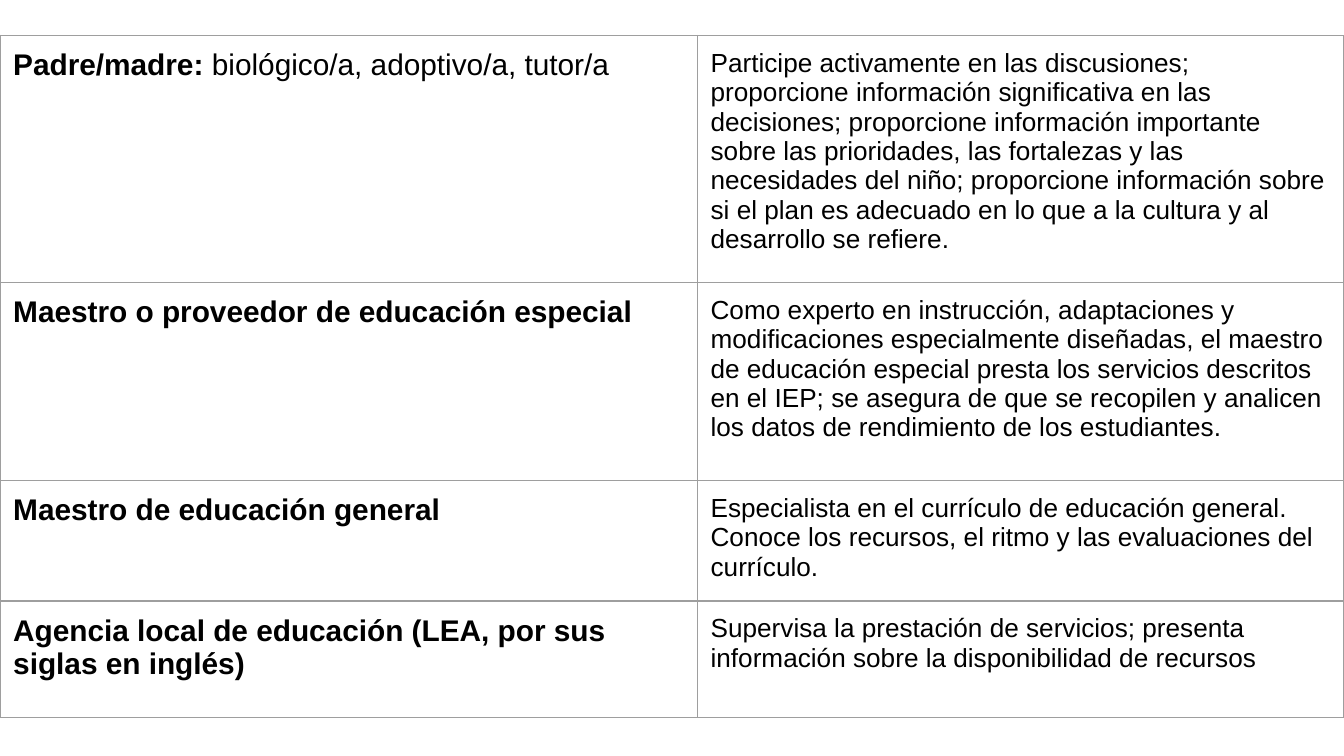
from lxml import etree
from pptx import Presentation
from pptx import util as u
from pptx.dml.color import RGBColor
from pptx.oxml import ns


def hue(code):
    return RGBColor.from_string(code)


def write(para, words, size=14, bold=False, color="000000"):
    run = para.add_run()
    run.text = words
    font = run.font
    font.name, font.size, font.bold = "Arial", u.Pt(size), bold
    font.color.rgb = hue(color)


# Each row: bold role, plain rest of the role, paragraphs of duties
roles = [
    ("Padre/madre:", " biológico/a, adoptivo/a, tutor/a",
     ["Participe activamente en las discusiones; proporcione información "
      "significativa en las decisiones; proporcione información importante "
      "sobre las prioridades, las fortalezas y las necesidades del niño; "
      "proporcione información sobre si el plan es adecuado en lo que a la "
      "cultura y al desarrollo se refiere."]),
    ("Maestro o proveedor de educación especial", "",
     ["Como experto en instrucción, adaptaciones y modificaciones "
      "especialmente diseñadas, el maestro de educación especial presta los "
      "servicios descritos en el IEP; se asegura de que se recopilen y "
      "analicen los datos de rendimiento de los estudiantes."]),
    ("Maestro de educación general", "",
     ["Especialista en el currículo de educación general.",
      "Conoce los recursos, el ritmo y las evaluaciones del currículo."]),
    ("Agencia local de educación (LEA, por sus siglas en inglés)", "",
     ["Supervisa la prestación de servicios; presenta información sobre la "
      "disponibilidad de recursos"]),
]
widths = [13.18, 12.22]
heights = [4.67, 3.74, 2.28, 2.21]

# Slide
deck = Presentation()
deck.slide_width, deck.slide_height = u.Cm(25.4), u.Cm(14.29)
slide = deck.slides.add_slide(deck.slide_layouts[6])

# Table grid
table = slide.shapes.add_table(
    len(roles), 2, u.Cm(0), u.Cm(0.67),
    u.Cm(sum(widths)), u.Cm(sum(heights))).table
table.first_row = table.horz_banding = False
for col, width in zip(table.columns, widths):
    col.width = u.Cm(width)
for row, height in zip(table.rows, heights):
    row.height = u.Cm(height)

# Cell margins, borders and fill
for cell in table.iter_cells():
    cell.margin_left = cell.margin_right = u.Cm(0.25)
    cell.margin_top = cell.margin_bottom = u.Cm(0.25)
    props = cell._tc.get_or_add_tcPr()
    for side in ("lnL", "lnR", "lnT", "lnB"):
        line = etree.SubElement(props, ns.qn("a:" + side), w=str(u.Pt(0.75)))
        paint = etree.SubElement(line, ns.qn("a:solidFill"))
        etree.SubElement(paint, ns.qn("a:srgbClr"), val="9E9E9E")
    cell.fill.solid()
    cell.fill.fore_color.rgb = hue("FFFFFF")

# Roles on the left, duties on the right
for row, (role, rest, duties) in zip(table.rows, roles):
    left, right = row.cells
    para = left.text_frame.paragraphs[0]
    write(para, role, size=16, bold=True)
    if rest:
        write(para, rest, size=16)
    frame = right.text_frame
    for i, duty in enumerate(duties):
        para = frame.add_paragraph() if i else frame.paragraphs[0]
        write(para, duty)

deck.save("out.pptx")
